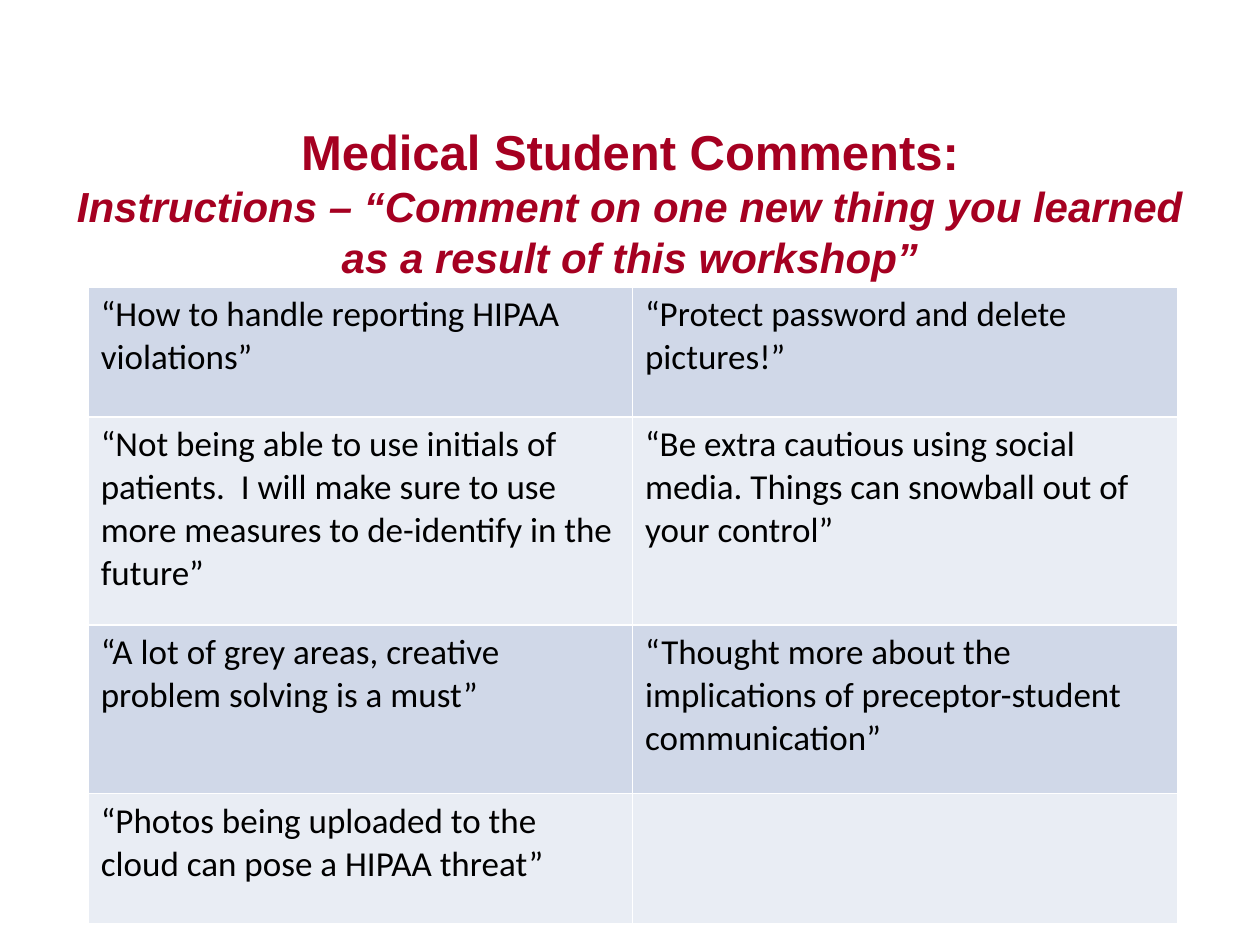
from lxml import etree
from pptx import Presentation
from pptx.dml.color import RGBColor
from pptx.enum import text
from pptx.oxml.ns import qn
from pptx.util import Inches, Pt

HEADING = "Medical Student Comments:"
INSTRUCTIONS = "Instructions – “Comment on one new thing you learned as a result of this workshop”"
COMMENTS = [
    ("“How to handle reporting HIPAA violations”",
     "“Protect password and delete pictures!”"),
    ("“Not being able to use initials of patients.  I will make sure to use "
     "more measures to de-identify in the future”",
     "“Be extra cautious using social media. Things can snowball out of your control”"),
    ("“A lot of grey areas, creative problem solving is a must”",
     "“Thought more about the implications of preceptor-student communication”"),
    ("“Photos being uploaded to the cloud can pose a HIPAA threat”", ""),
]
COLUMN_WIDTHS = (4.32, 4.33)
ROW_HEIGHTS = (1.03, 1.65, 1.34, 1.03)

THEME = {
    "title_font": "Arial", "title_color": "A50021",
    "heading_size": 28, "instructions_size": 24,
    "body_font": "Calibri", "body_color": "000000", "body_size": 20,
    "bands": ("D0D8E8", "E9EDF4"),
    "border_color": "FFFFFF", "border_width": 1,
}


def style(font, name, size, color):
    font.name, font.size = name, Pt(size)
    font.color.rgb = RGBColor.from_string(color)


def add_borders(cell):
    properties = cell._tc.get_or_add_tcPr()
    for side in ("lnL", "lnR", "lnT", "lnB"):
        line = etree.SubElement(properties, qn(f"a:{side}"),
                                w=str(Pt(THEME["border_width"])))
        fill = etree.SubElement(line, qn("a:solidFill"))
        etree.SubElement(fill, qn("a:srgbClr"), val=THEME["border_color"])


def add_title(slide):
    title = slide.shapes.title
    title.left, title.top = Inches(0.5), Inches(0.92)
    title.width, title.height = Inches(9), Inches(1.36)
    frame = title.text_frame
    frame.auto_size = text.MSO_AUTO_SIZE.NONE
    frame.word_wrap = True
    frame.vertical_anchor = text.MSO_ANCHOR.MIDDLE
    frame.text = f"{HEADING}\v{INSTRUCTIONS}"
    paragraph = frame.paragraphs[0]
    paragraph.alignment = text.PP_ALIGN.CENTER
    heading, instructions = paragraph.runs
    for run, size in ((heading, THEME["heading_size"]),
                      (instructions, THEME["instructions_size"])):
        style(run.font, THEME["title_font"], size, THEME["title_color"])
        run.font.bold = True
    instructions.font.italic = True


def add_comments(slide):
    table = slide.shapes.add_table(
        len(ROW_HEIGHTS), len(COLUMN_WIDTHS), Inches(0.7), Inches(2.28),
        Inches(sum(COLUMN_WIDTHS)), Inches(sum(ROW_HEIGHTS))).table
    table.first_row = table.horz_banding = False
    for column, width in zip(table.columns, COLUMN_WIDTHS):
        column.width = Inches(width)
    for index, (row, height, comments) in enumerate(
            zip(table.rows, ROW_HEIGHTS, COMMENTS)):
        row.height = Inches(height)
        band = RGBColor.from_string(THEME["bands"][index % 2])
        for cell, comment in zip(row.cells, comments):
            add_borders(cell)
            cell.fill.solid()
            cell.fill.fore_color.rgb = band
            cell.text_frame.text = comment
            for run in cell.text_frame.paragraphs[0].runs:
                style(run.font, THEME["body_font"], THEME["body_size"],
                      THEME["body_color"])


def main():
    deck = Presentation()
    deck.slide_width, deck.slide_height = Inches(10), Inches(7.5)
    slide = deck.slides.add_slide(deck.slide_layouts.get_by_name("Title Only"))
    add_title(slide)
    add_comments(slide)
    deck.save("out.pptx")


if __name__ == "__main__":
    main()
